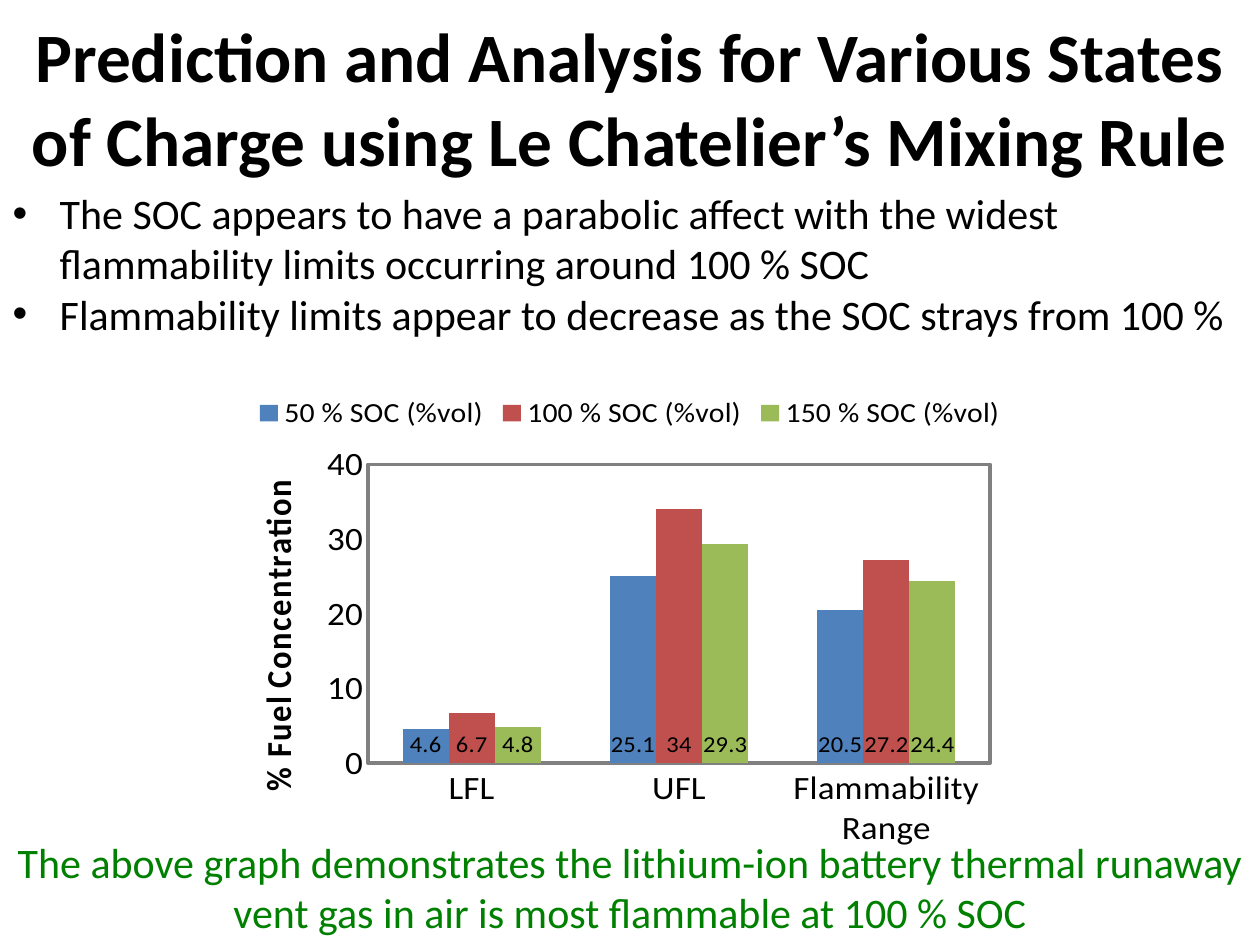
from lxml import etree
from pptx import Presentation
from pptx.chart.data import CategoryChartData
from pptx.dml.color import RGBColor
from pptx.enum.chart import (XL_CHART_TYPE, XL_LABEL_POSITION,
                             XL_LEGEND_POSITION, XL_TICK_MARK)
from pptx.enum.text import MSO_ANCHOR, PP_ALIGN
from pptx.oxml import parse_xml
from pptx.oxml.ns import nsdecls, qn
from pptx.util import Cm, Pt

COLUMNS = XL_CHART_TYPE.COLUMN_CLUSTERED
IN_BASE = XL_LABEL_POSITION.INSIDE_BASE
TOP = XL_LEGEND_POSITION.TOP
NO_TICK = XL_TICK_MARK.NONE
MIDDLE, UPPER = MSO_ANCHOR.MIDDLE, MSO_ANCHOR.TOP
CENTER, LEFT = PP_ALIGN.CENTER, PP_ALIGN.LEFT

BLACK = RGBColor(0x00, 0x00, 0x00)
GREEN = RGBColor(0x00, 0x80, 0x00)
GRAY = RGBColor(0x80, 0x80, 0x80)
BLUE = RGBColor(0x4F, 0x81, 0xBD)
RED = RGBColor(0xC0, 0x50, 0x4D)
LIME = RGBColor(0x9B, 0xBB, 0x59)
FONT = "Calibri"

TITLE = ("Prediction and Analysis for Various States of Charge "
         "using Le Chatelier’s Mixing Rule")
POINTS = [
    "The SOC appears to have a parabolic affect with the widest "
    "flammability limits occurring around 100 % SOC",
    "Flammability limits appear to decrease as the SOC strays from 100 %",
]
CAPTION = ("The above graph demonstrates the lithium-ion battery thermal "
           "runaway vent gas in air is most flammable at 100 % SOC")
AXIS = "% Fuel Concentration"
GROUPS = ["LFL", "UFL", "Flammability Range"]
SERIES = [
    ("50 % SOC (%vol)", BLUE, (4.6, 25.1, 20.5)),
    ("100 % SOC (%vol)", RED, (6.7, 34, 27.2)),
    ("150 % SOC (%vol)", LIME, (4.8, 29.3, 24.4)),
]
PLOT = {"x": 0.18, "y": 0.19, "w": 0.76, "h": 0.69}
WIDTH, HEIGHT = Cm(25.4), Cm(19.05)
INDENT = Cm(0.95)


def style(font, size, color=BLACK, bold=False):
    font.name, font.size, font.bold = FONT, Pt(size), bold
    font.color.rgb = color


def place(shape, top, height):
    shape.left, shape.top = 0, top
    shape.width, shape.height = WIDTH, height


def write(frame, lines, size, align, color=BLACK, bold=False, anchor=UPPER):
    frame.word_wrap = True
    frame.vertical_anchor = anchor
    for i, line in enumerate(lines):
        para = frame.add_paragraph() if i else frame.paragraphs[0]
        para.alignment = align
        para.space_before = Pt(0)
        run = para.add_run()
        run.text = line
        style(run.font, size, color, bold)


def bullet(para):
    props = para._p.get_or_add_pPr()
    props.set("marL", str(INDENT))
    props.set("indent", str(-INDENT))
    etree.SubElement(props, qn("a:buFont")).set("typeface", "Arial")
    etree.SubElement(props, qn("a:buChar")).set("char", "•")


def frame_plot(chart):
    """Fix the inner plot area and outline it in gray."""
    area = chart._chartSpace.chart.plotArea
    for old in area.findall(qn("c:layout")):
        area.remove(old)
    parts = "".join(f'<c:{k}Mode val="edge"/>' for k in "xy")
    parts += "".join(f'<c:{k} val="{v}"/>' for k, v in PLOT.items())
    area.insert(0, parse_xml(
        f'<c:layout {nsdecls("c")}><c:manualLayout>'
        f'<c:layoutTarget val="inner"/>{parts}</c:manualLayout></c:layout>'))
    area.append(parse_xml(
        f'<c:spPr {nsdecls("c", "a")}><a:noFill/><a:ln w="{Pt(2)}">'
        f'<a:solidFill><a:srgbClr val="{GRAY}"/></a:solidFill>'
        '</a:ln></c:spPr>'))


def draw_chart(slide):
    data = CategoryChartData()
    data.categories = GROUPS
    for name, _, vals in SERIES:
        data.add_series(name, vals)
    chart = slide.shapes.add_chart(COLUMNS, Cm(4.45), Cm(7.7), Cm(16.5),
                                   Cm(9.4), data).chart
    style(chart.font, 10)
    chart.has_title = False
    chart.has_legend = True
    chart.legend.position = TOP
    chart.legend.include_in_layout = False
    style(chart.legend.font, 17)

    for axis in (chart.category_axis, chart.value_axis):
        axis.major_tick_mark = axis.minor_tick_mark = NO_TICK
        axis.has_major_gridlines = False
        axis.format.line.color.rgb = GRAY
        style(axis.tick_labels.font, 20)
    scale = chart.value_axis
    scale.minimum_scale, scale.maximum_scale, scale.major_unit = 0, 40, 10
    run = scale.axis_title.text_frame.paragraphs[0].add_run()
    run.text = AXIS
    style(run.font, 20, bold=True)

    plot = chart.plots[0]
    plot.gap_width, plot.overlap = 150, 0
    plot.vary_by_categories = False
    for series, (_, color, _) in zip(plot.series, SERIES):
        series.format.fill.solid()
        series.format.fill.fore_color.rgb = color
        labels = series.data_labels
        labels.show_value = True
        labels.position = IN_BASE
        style(labels.font, 14)
    frame_plot(chart)


def main():
    deck = Presentation()
    deck.slide_width, deck.slide_height = WIDTH, HEIGHT
    slide = deck.slides.add_slide(deck.slide_layouts[1])

    title = slide.shapes.title
    place(title, Cm(0.05), Cm(3.8))
    write(title.text_frame, [TITLE], 39.6, CENTER, bold=True, anchor=MIDDLE)

    draw_chart(slide)

    body = slide.placeholders[1]
    place(body, Cm(3.65), Cm(4.37))
    write(body.text_frame, POINTS, 24, LEFT)
    for para in body.text_frame.paragraphs:
        bullet(para)

    note = slide.shapes.add_textbox(0, Cm(16.74), WIDTH, Cm(2.31))
    write(note.text_frame, [CAPTION], 24, CENTER, GREEN)

    deck.save("out.pptx")


if __name__ == "__main__":
    main()
